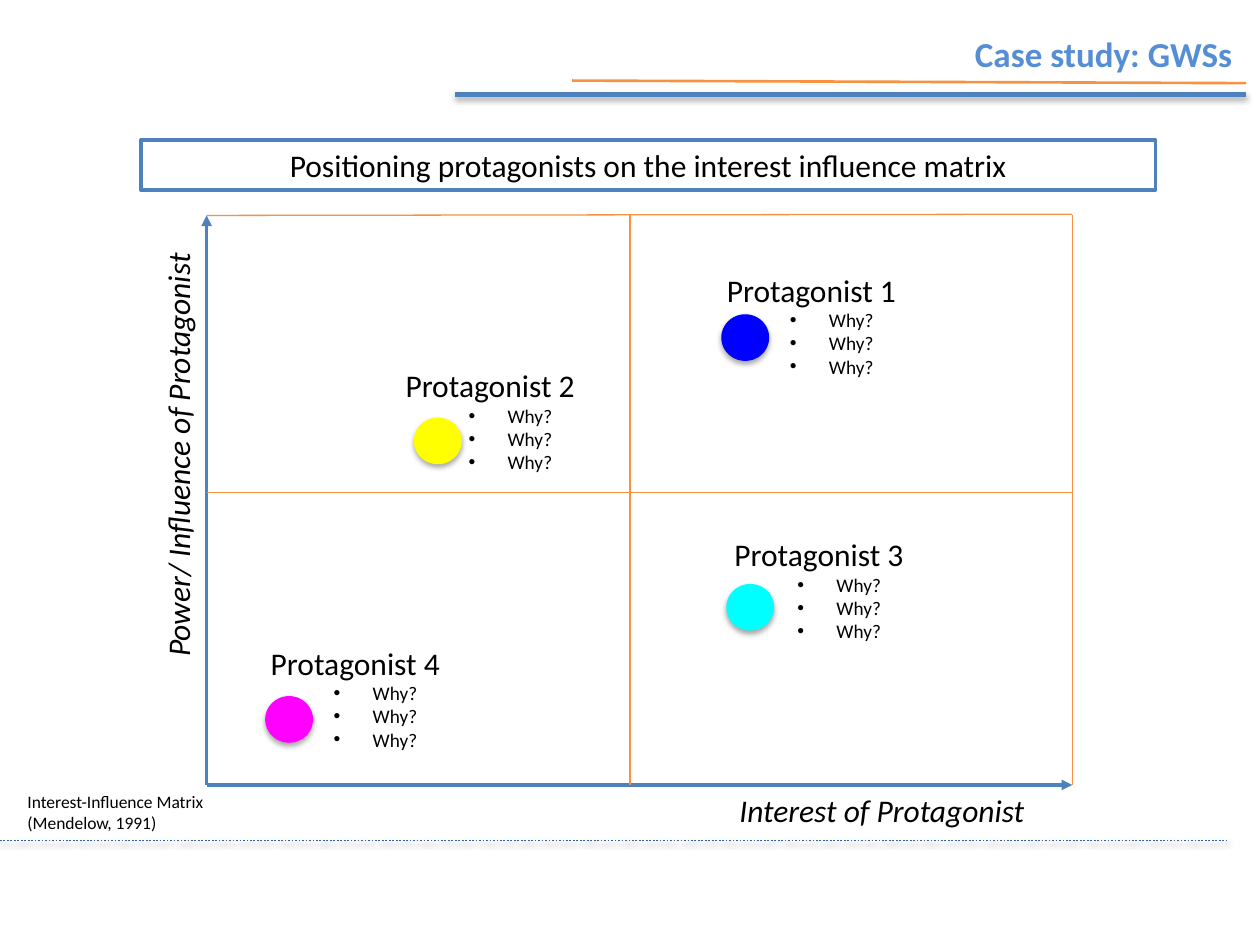
from dataclasses import dataclass
from lxml.etree import SubElement
from pptx import Presentation
from pptx.dml.color import RGBColor
from pptx.enum.dml import MSO_LINE
from pptx.enum.shapes import MSO_CONNECTOR, MSO_SHAPE
from pptx.enum.text import MSO_ANCHOR, PP_ALIGN
from pptx.oxml.ns import qn
from pptx.util import Inches, Pt

WIDTH, HEIGHT = Inches(10), Inches(7.5)


@dataclass(frozen=True)
class Theme:
    font: str = "Calibri"
    ink: str = "000000"
    paper: str = "FFFFFF"
    blue: str = "4F81BD"
    navy: str = "376092"
    title: str = "558ED5"
    orange: str = "F69240"
    head: int = 20
    body: int = 18
    note: int = 11
    cite: int = 10


THEME = Theme()
LEFT, MID_X, RIGHT = 16.4, 50, 85.1
TOP, MID_Y, BASE = 22.8, 52.13, 83.07

# name, label corner, dot corner, dot colour
ACTORS = [
    ("Protagonist 1", (56.7, 28), (57.3, 33.33), "0000FF"),
    ("Protagonist 2", (31.2, 38.13), (32.9, 44.27), "FFFF00"),
    ("Protagonist 3", (57.3, 56), (57.7, 61.87), "00FFFF"),
    ("Protagonist 4", (20.5, 67.47), (21.1, 73.73), "FF00FF"),
]


def place(*shares):
    """Turn percent shares (x, y, x, y) into slide lengths."""
    sides = (WIDTH, HEIGHT, WIDTH, HEIGHT)
    return [round(side * share / 100) for side, share in zip(sides, shares)]


def paint(color):
    return RGBColor.from_string(color)


def effect(shape, shade):
    """Set an empty effect list, or one holding a soft shadow."""
    props = shape._element.spPr
    effects = SubElement(props, qn("a:effectLst"))
    if shade:
        outer = SubElement(effects, qn("a:outerShdw"), blurRad="40000",
                           dist="23000", dir="5400000", rotWithShape="0")
        black = SubElement(outer, qn("a:srgbClr"), val=THEME.ink)
        SubElement(black, qn("a:alpha"), val="35000")


def add_line(slide, ends, color, width, shade=False, dash=None, arrow=False):
    line = slide.shapes.add_connector(MSO_CONNECTOR.STRAIGHT, *place(*ends))
    line.line.color.rgb = paint(color)
    line.line.width = Pt(width)
    if dash:
        line.line.dash_style = dash
    if arrow:
        SubElement(line.line._get_or_add_ln(), qn("a:tailEnd"), type="triangle")
    effect(line, shade)


def add_shape(slide, kind, box, fill, edge, width, shade=False):
    shape = slide.shapes.add_shape(kind, *place(*box))
    shape.fill.solid()
    shape.fill.fore_color.rgb = paint(fill)
    shape.line.color.rgb = paint(edge)
    shape.line.width = Pt(width)
    effect(shape, shade)
    return shape


def add_run(para, text, size, color=THEME.ink, bold=False, italic=False):
    run = para.add_run()
    run.text = text
    font = run.font
    font.name, font.size = THEME.font, Pt(size)
    font.bold, font.italic = bold, italic
    font.color.rgb = paint(color)


def add_text(slide, box, text, size, wrap=True, align=PP_ALIGN.LEFT, **style):
    shape = slide.shapes.add_textbox(*place(*box))
    frame = shape.text_frame
    frame.word_wrap = wrap
    para = frame.paragraphs[0]
    para.alignment = align
    add_run(para, text, size, **style)
    return shape


def add_point(frame, text):
    para = frame.add_paragraph()
    para.level = 1
    props = para._p.get_or_add_pPr()
    props.set("marL", str(Inches(0.81)))
    props.set("indent", str(Inches(-0.31)))
    SubElement(props, qn("a:buFont"), typeface="Arial")
    SubElement(props, qn("a:buChar"), char="•")
    add_run(para, text, THEME.note)


def add_actor(slide, name, label, dot, color):
    box = add_text(slide, (*label, 23.1, 12.8), name, THEME.body)
    for _ in range(3):
        add_point(box.text_frame, "Why?")
    add_shape(slide, MSO_SHAPE.OVAL, (*dot, 3.7, 4.8), color, color, 0.75, True)


def add_header(slide):
    add_line(slide, (36.1, 10, 98.9, 10), THEME.blue, 3, shade=True)
    add_line(slide, (45.4, 8.53, 98.9, 8.8), THEME.orange, 1.5)
    add_text(slide, (76.2, 2.8, 22.6, 5.87), "Case study: GWSs", THEME.head,
             wrap=False, align=PP_ALIGN.RIGHT, color=THEME.title, bold=True)
    banner = add_shape(slide, MSO_SHAPE.RECTANGLE, (11.2, 14.8, 80.5, 5.33),
                       THEME.paper, THEME.blue, 2)
    banner.text_frame.vertical_anchor = MSO_ANCHOR.MIDDLE
    para = banner.text_frame.paragraphs[0]
    para.alignment = PP_ALIGN.CENTER
    add_run(para, "Positioning protagonists on the interest influence matrix",
            THEME.body)


def add_matrix(slide):
    for end in ((RIGHT, BASE), (LEFT, TOP)):
        add_line(slide, (LEFT, BASE, *end), THEME.blue, 2, arrow=True)
    for ends in ((LEFT, MID_Y, RIGHT, MID_Y), (MID_X, TOP, MID_X, BASE),
                 (LEFT, TOP, RIGHT, TOP - 0.13), (RIGHT, TOP, RIGHT, BASE)):
        add_line(slide, ends, THEME.orange, 0.75)
    add_text(slide, (57.7, BASE, 32.6, 5.33), "Interest of Protagonist",
             THEME.body, italic=True)
    power = add_text(slide, (-4.9, 42.4, 38.3, 5.73),
                     "Power/ Influence of Protagonist", THEME.body, italic=True)
    power.rotation = 270


def add_footer(slide):
    add_text(slide, (1.2, BASE, 20, 5.87),
             "Interest-Influence Matrix (Mendelow, 1991)", THEME.cite)
    add_line(slide, (0, 88.93, 97.5, 88.93), THEME.navy, 1, shade=True,
             dash=MSO_LINE.ROUND_DOT)


def main():
    deck = Presentation()
    deck.slide_width, deck.slide_height = WIDTH, HEIGHT
    slide = deck.slides.add_slide(deck.slide_layouts[6])
    add_header(slide)
    add_footer(slide)
    add_matrix(slide)
    for actor in ACTORS:
        add_actor(slide, *actor)
    deck.save("out.pptx")


if __name__ == "__main__":
    main()
